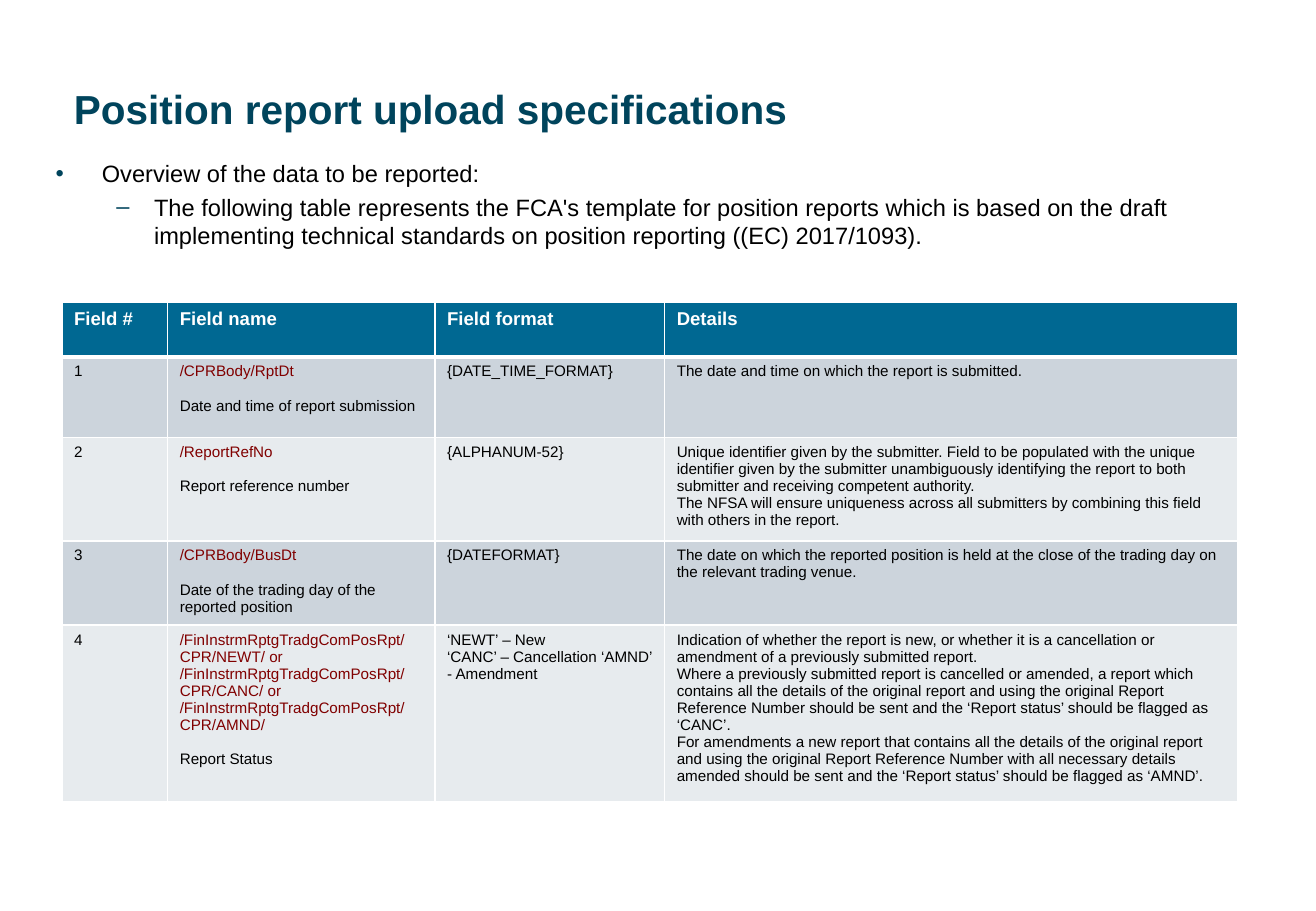
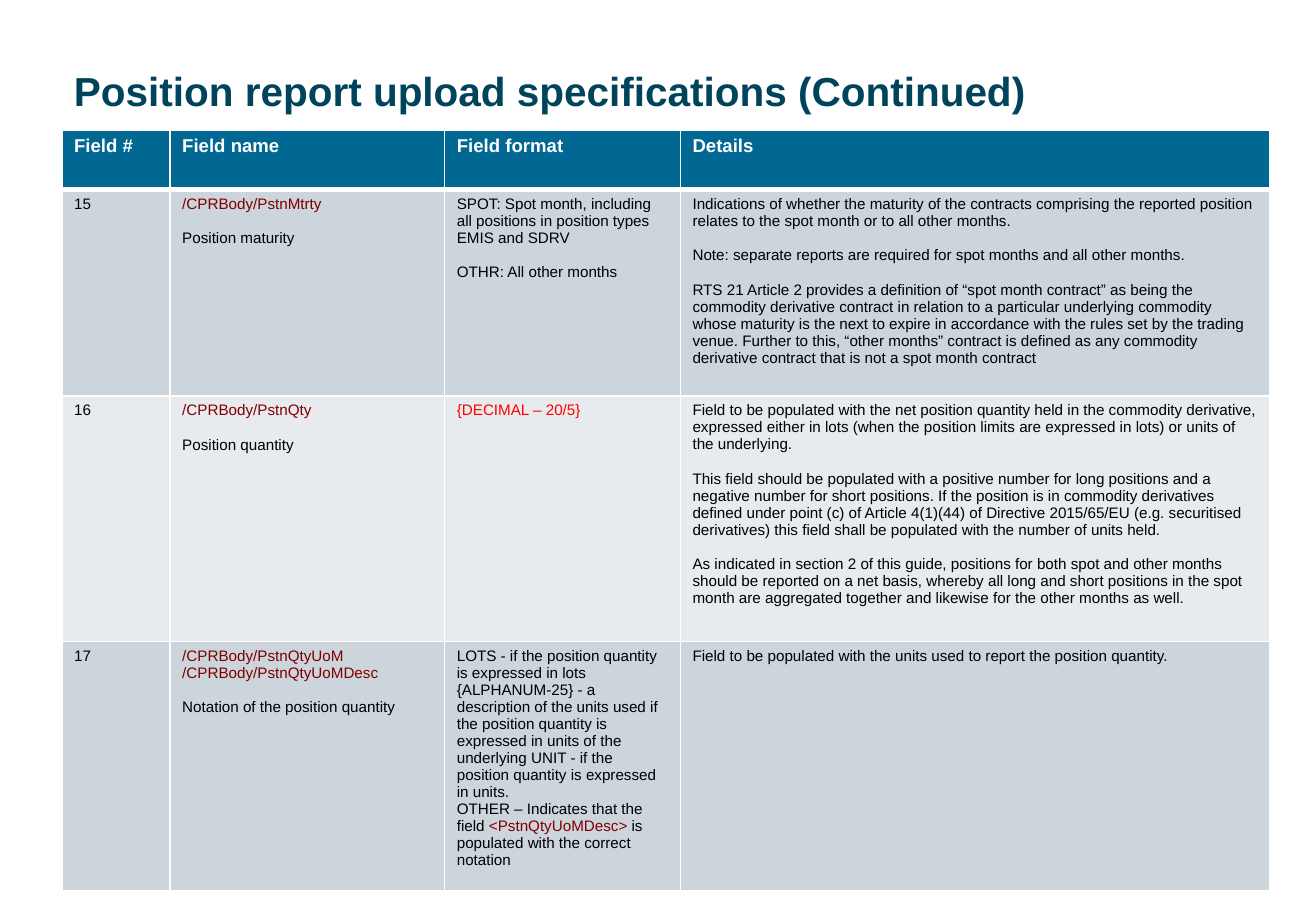
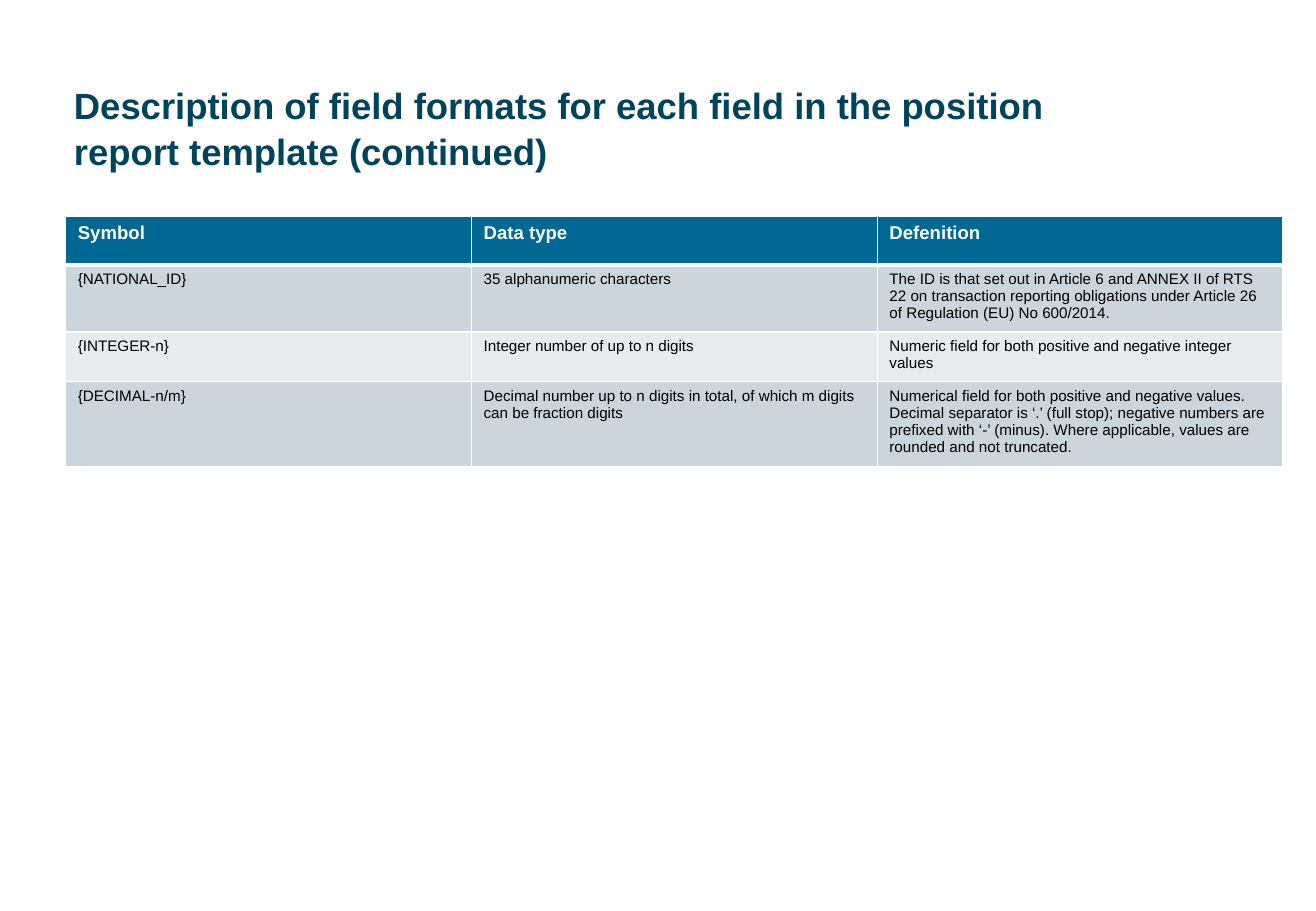
from dataclasses import dataclass

from lxml import etree
from pptx import Presentation
from pptx.dml.color import RGBColor
from pptx.enum.text import MSO_ANCHOR
from pptx.oxml.ns import qn
from pptx.util import Pt

TOP = MSO_ANCHOR.TOP
PX = 9144  # EMU per px, 100 px to the inch
BLANK_LAYOUT = 6


@dataclass(frozen=True)
class Theme:
    font: str = "Arial"
    title: str = "00445C"
    text: str = "000000"
    light: str = "FFFFFF"
    header: str = "006892"
    bands: tuple = ("CCD4DC", "E7EBEE")
    field: str = "800000"
    alert: str = "FF0000"
    title_size: float = 24
    long_title_size: float = 21.6
    body_size: float = 14
    header_size: float = 11
    cell_size: float = 9
    cell_gap: float = 10.3
    thin: float = 1
    thick: float = 3


THEME = Theme()


@dataclass(frozen=True)
class Line:
    """One paragraph of a cell; text is a string or (text, color) spans."""
    text: str | tuple
    color: str = THEME.text
    gap: float = 0


def field(text):
    return Line(text, color=THEME.field)


def spaced(text):
    """A paragraph set one line apart from the one above."""
    return Line(text, gap=THEME.cell_gap)


FIELD_HEADS = ("Field #", "Field name", "Field format", "Details")

FIRST_FIELDS = (
    ("1",
     (field("/CPRBody/RptDt"), spaced("Date and time of report submission")),
     "{DATE_TIME_FORMAT}",
     "The date and time on which the report is submitted."),
    ("2",
     (field("/ReportRefNo"), spaced("Report reference number")),
     "{ALPHANUM-52}",
     ("Unique identifier given by the submitter. Field to be populated with the unique "
      "identifier given by the submitter unambiguously identifying the report to both "
      "submitter and receiving competent authority.",
      "The NFSA will ensure uniqueness across all submitters by combining this field "
      "with others in the report.")),
    ("3",
     (field("/CPRBody/BusDt"), spaced("Date of the trading day of the reported position")),
     "{DATEFORMAT}",
     "The date on which the reported position is held at the close of the trading day on "
     "the relevant trading venue."),
    ("4",
     (field("/FinInstrmRptgTradgComPosRpt/CPR/NEWT/ or"),
      field("/FinInstrmRptgTradgComPosRpt/CPR/CANC/ or"),
      field("/FinInstrmRptgTradgComPosRpt/CPR/AMND/"),
      spaced("Report Status")),
     ("‘NEWT’ – New", "‘CANC’ – Cancellation ‘AMND’ - Amendment"),
     ("Indication of whether the report is new, or whether it is a cancellation or "
      "amendment of a previously submitted report.",
      "Where a previously submitted report is cancelled or amended, a report which "
      "contains all the details of the original report and using the original Report "
      "Reference Number should be sent and the ‘Report status’ should be flagged as "
      "‘CANC’.",
      "For amendments a new report that contains all the details of the original report "
      "and using the original Report Reference Number with all necessary details "
      "amended should be sent and the ‘Report status’ should be flagged as ‘AMND’.")),
)

LATER_FIELDS = (
    ("15",
     (field("/CPRBody/PstnMtrty"), spaced("Position maturity")),
     ("SPOT: Spot month, including all positions in position types EMIS and SDRV",
      spaced("OTHR: All other months")),
     ("Indications of whether the maturity of the contracts comprising the reported "
      "position relates to the spot month or to all other months.",
      spaced("Note: separate reports are required for spot months and all other months."),
      spaced("RTS 21 Article 2 provides a definition of “spot month contract” as being the "
             "commodity derivative contract in relation to a particular underlying "
             "commodity whose maturity is the next to expire in accordance with the rules "
             "set by the trading venue. Further to this, “other months” contract is "
             "defined as any commodity derivative contract that is not a spot month "
             "contract"))),
    ("16",
     (field("/CPRBody/PstnQty"), spaced("Position quantity")),
     (Line("{DECIMAL – 20/5}", color=THEME.alert),),
     ("Field to be populated with the net position quantity held in the commodity "
      "derivative, expressed either in lots (when the position limits are expressed in "
      "lots) or units of the underlying.",
      spaced("This field should be populated with a positive number for long positions and "
             "a negative number for short positions. If the position is in commodity "
             "derivatives defined under point (c) of Article 4(1)(44) of Directive "
             "2015/65/EU (e.g. securitised derivatives) this field shall be populated "
             "with the number of units held."),
      spaced("As indicated in section 2 of this guide, positions for both spot and other "
             "months should be reported on a net basis, whereby all long and short "
             "positions in the spot month are aggregated together and likewise for the "
             "other months as well."))),
    ("17",
     (field("/CPRBody/PstnQtyUoM"), field("/CPRBody/PstnQtyUoMDesc"),
      spaced("Notation of the position quantity")),
     ("LOTS - if the position quantity is expressed in lots {ALPHANUM-25} - a description "
      "of the units used if the position quantity is expressed in units of the underlying "
      "UNIT - if the position quantity is expressed in units.",
      Line((("OTHER – Indicates that the field ", THEME.text),
            ("<PstnQtyUoMDesc> ", THEME.field),
            ("is populated with the correct notation", THEME.text)))),
     "Field to be populated with the units used to report the position quantity."),
)

FORMAT_HEADS = ("Symbol", "Data type", "Defenition")

FORMATS = (
    ("{NATIONAL_ID}",
     "35 alphanumeric characters",
     "The ID is that set out in Article 6 and ANNEX II of RTS 22 on transaction reporting "
     "obligations under Article 26 of Regulation (EU) No 600/2014."),
    ("{INTEGER-n}",
     "Integer number of up to n digits",
     "Numeric field for both positive and negative integer values"),
    ("{DECIMAL-n/m}",
     "Decimal number up to n digits in total, of which m digits can be fraction digits",
     "Numerical field for both positive and negative values. Decimal separator is ‘.’ (full "
     "stop); negative numbers are prefixed with ‘-’ (minus). Where applicable, values are "
     "rounded and not truncated."),
)


def px(length):
    return int(length * PX)


def add_bullet(para, mark, indent, hang):
    props = para._p.get_or_add_pPr()
    props.set("marL", str(px(indent)))
    props.set("indent", str(-px(hang)))
    color = etree.SubElement(props, qn("a:buClr"))
    etree.SubElement(color, qn("a:srgbClr"), val=THEME.title)
    etree.SubElement(props, qn("a:buFont"), typeface=THEME.font)
    etree.SubElement(props, qn("a:buChar"), char=mark)


def add_para(frame, text, *, size, color=THEME.text, bold=False, gap=0,
             spacing=None, bullet=None):
    """Write into the empty first paragraph or a new one; text may be (text, color) spans."""
    para = frame.paragraphs[0]
    if para.runs:
        para = frame.add_paragraph()
    if bullet:
        add_bullet(para, *bullet)
    if gap:
        para.space_before = Pt(gap)
    if spacing:
        para.line_spacing = spacing
    spans = ((text, color),) if isinstance(text, str) else text
    for content, span_color in spans:
        for number, part in enumerate(content.split("\n")):
            if number:
                para.add_line_break()
            span = para.add_run()
            span.text = part
            span.font.name = THEME.font
            span.font.size = Pt(size)
            span.font.bold = bold
            span.font.color.rgb = RGBColor.from_string(span_color)


def add_box(page, left, top, width, height):
    box = page.shapes.add_textbox(px(left), px(top), px(width), px(height))
    frame = box.text_frame
    frame.word_wrap = True
    frame.vertical_anchor = TOP
    frame.margin_top = px(8)
    return frame


def add_title(page, text, top=59, size=THEME.title_size):
    frame = add_box(page, 51, top, 975, 69)
    add_para(frame, text, size=size, color=THEME.title, bold=True, spacing=1.05)


def set_borders(cell, top, bottom):
    props = cell._tc.get_or_add_tcPr()
    sides = {"a:lnL": THEME.thin, "a:lnR": THEME.thin, "a:lnT": top, "a:lnB": bottom}
    for tag, width in sides.items():
        border = etree.SubElement(props, qn(tag), w=str(Pt(width)))
        fill = etree.SubElement(border, qn("a:solidFill"))
        etree.SubElement(fill, qn("a:srgbClr"), val=THEME.light)


def fill_cell(cell, lines, *, fill, top=THEME.thin, bottom=THEME.thin, **text_format):
    set_borders(cell, top, bottom)
    cell.fill.solid()
    cell.fill.fore_color.rgb = RGBColor.from_string(fill)
    cell.vertical_anchor = TOP
    for line in (lines,) if isinstance(lines, str) else lines:
        if isinstance(line, Line):
            add_para(cell.text_frame, line.text, color=line.color, gap=line.gap, **text_format)
        else:
            add_para(cell.text_frame, line, **text_format)


def add_grid(page, left, top, widths, heights, heads, rows):
    shape = page.shapes.add_table(len(heights), len(widths), px(left), px(top),
                                  px(sum(widths)), px(sum(heights)))
    table = shape.table
    for column, width in zip(table.columns, widths):
        column.width = px(width)
    for row, height in zip(table.rows, heights):
        row.height = px(height)
    for column, head in enumerate(heads):
        fill_cell(table.cell(0, column), head, fill=THEME.header, bottom=THEME.thick,
                  size=THEME.header_size, color=THEME.light, bold=True)
    for number, row in enumerate(rows, start=1):
        band = THEME.bands[(number - 1) % 2]
        edge = THEME.thick if number == 1 else THEME.thin
        for column, lines in enumerate(row):
            fill_cell(table.cell(number, column), lines, fill=band, top=edge,
                      size=THEME.cell_size)


def add_page(deck):
    return deck.slides.add_slide(deck.slide_layouts[BLANK_LAYOUT])


def build_overview(deck):
    page = add_page(deck)
    add_title(page, "Position report upload specifications")
    body = add_box(page, 36, 123, 1004, 495)
    add_para(body, "Overview of the data to be reported:",
             size=THEME.body_size, bullet=("•", 38, 38))
    add_para(body, "The following table represents the FCA's template for position reports "
             "which is based on the draft implementing technical standards on position "
             "reporting ((EC) 2017/1093).",
             size=THEME.body_size, gap=3, bullet=("–", 81, 31))
    add_grid(page, 51, 249, (87, 220, 189, 472), (45, 66, 80, 66, 136),
             FIELD_HEADS, FIRST_FIELDS)


def build_continued(deck):
    page = add_page(deck)
    add_title(page, "Position report upload specifications (Continued)", top=44)
    add_grid(page, 51, 107, (89, 226, 194, 485), (49, 170, 202, 192),
             FIELD_HEADS, LATER_FIELDS)


def build_formats(deck):
    page = add_page(deck)
    add_title(page, "Description of field formats for each field in the position\n"
              "report template (continued)", size=THEME.long_title_size)
    add_grid(page, 54, 178, (334,) * 3, (40, 52, 41, 66), FORMAT_HEADS, FORMATS)


def main():
    deck = Presentation()
    deck.slide_width = px(1083)
    deck.slide_height = px(750)
    build_overview(deck)
    build_continued(deck)
    build_formats(deck)
    deck.save("out.pptx")


if __name__ == "__main__":
    main()
